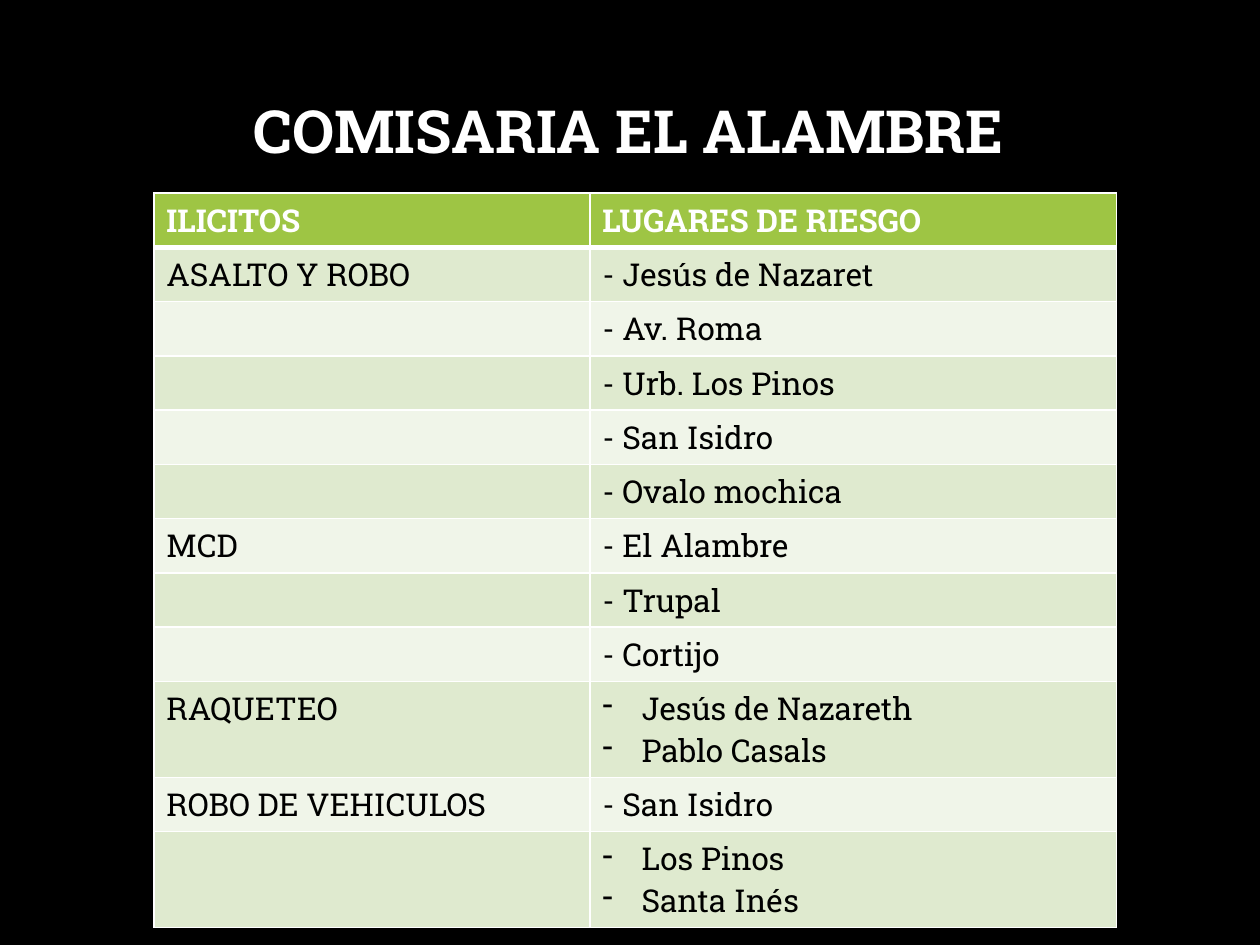
"""Build the slide of risk places for the El Alambre police station."""
from lxml.etree import SubElement
from pptx import Presentation
from pptx.dml.color import RGBColor
from pptx.enum.text import MSO_ANCHOR, MSO_AUTO_SIZE, PP_ALIGN
from pptx.oxml.ns import qn
from pptx.util import Cm, Pt

FONT = "Roboto Slab"
COLORS = {
    "background": "000000",
    "light": "FFFFFF",
    "dark": "000000",
    "header": "9EC544",
    "odd": "DFEACF",
    "even": "F0F5E9",
}
HEADINGS = ("ILICITOS", "LUGARES DE RIESGO")
RISKS = [
    ("ASALTO Y ROBO", ["- Jesús de Nazaret"]),
    ("", ["- Av. Roma"]),
    ("", ["- Urb. Los Pinos"]),
    ("", ["- San Isidro"]),
    ("", ["- Ovalo mochica"]),
    ("MCD", ["- El Alambre"]),
    ("", ["- Trupal"]),
    ("", ["- Cortijo"]),
    ("RAQUETEO", ["Jesús de Nazareth", "Pablo Casals"]),
    ("ROBO DE VEHICULOS", ["- San Isidro"]),
    ("", ["Los Pinos", "Santa Inés"]),
]


def color(name):
    return RGBColor.from_string(COLORS[name])


def add_span(para, text, size, color_name, bold):
    span = para.add_run()
    span.text = text
    span.font.name = FONT
    span.font.size = Pt(size)
    span.font.bold = bold
    span.font.color.rgb = color(color_name)


def add_title(page, text):
    box = page.shapes.title
    box.left, box.top, box.width, box.height = Cm(1.9), Cm(1.7), Cm(21.56), Cm(2.03)
    frame = box.text_frame
    frame.auto_size = MSO_AUTO_SIZE.NONE
    frame.vertical_anchor = MSO_ANCHOR.MIDDLE
    para = frame.paragraphs[0]
    para.alignment = PP_ALIGN.CENTER
    para.line_spacing = 0.9
    add_span(para, text, 34, "light", True)


def add_dash_bullet(para):
    properties = para._p.get_or_add_pPr()
    properties.set("marL", str(Cm(0.79)))
    properties.set("indent", str(-Cm(0.79)))
    SubElement(properties, qn("a:buChar"), char="-")


def set_borders(cell, top, bottom):
    properties = cell._tc.get_or_add_tcPr()
    for side, width in (("L", 1), ("R", 1), ("T", top), ("B", bottom)):
        line = SubElement(properties, qn(f"a:ln{side}"), w=str(Pt(width)))
        fill = SubElement(line, qn("a:solidFill"))
        SubElement(fill, qn("a:srgbClr"), val=COLORS["light"])


def fill_cell(cell, lines, row_index):
    is_header = row_index == 0
    set_borders(cell, 3 if row_index == 1 else 1, 3 if is_header else 1)
    cell.fill.solid()
    cell.fill.fore_color.rgb = color("header" if is_header else ("even", "odd")[row_index % 2])
    frame = cell.text_frame
    for index, text in enumerate(lines):
        para = frame.add_paragraph() if index else frame.paragraphs[0]
        if len(lines) > 1:
            add_dash_bullet(para)
        if text:
            add_span(para, text, 18, "light" if is_header else "dark", is_header)


def add_risk_table(page):
    rows = [(HEADINGS[0], [HEADINGS[1]])] + RISKS
    frame = page.shapes.add_table(len(rows), 2, Cm(3.1), Cm(3.89), Cm(19.41), Cm(12.6))
    table = frame.table
    table.horz_banding = False
    for column, width in zip(table.columns, (8.79, 10.62)):
        column.width = Cm(width)
    for index, (offence, places) in enumerate(rows):
        table.rows[index].height = Cm(1.05)
        fill_cell(table.cell(index, 0), [offence], index)
        fill_cell(table.cell(index, 1), places, index)


def main():
    deck = Presentation()
    deck.slide_width, deck.slide_height = Cm(25.4), Cm(19.05)
    page = deck.slides.add_slide(deck.slide_layouts[5])
    page.background.fill.solid()
    page.background.fill.fore_color.rgb = color("background")
    add_title(page, "COMISARIA EL ALAMBRE")
    add_risk_table(page)
    deck.save("out.pptx")


if __name__ == "__main__":
    main()
